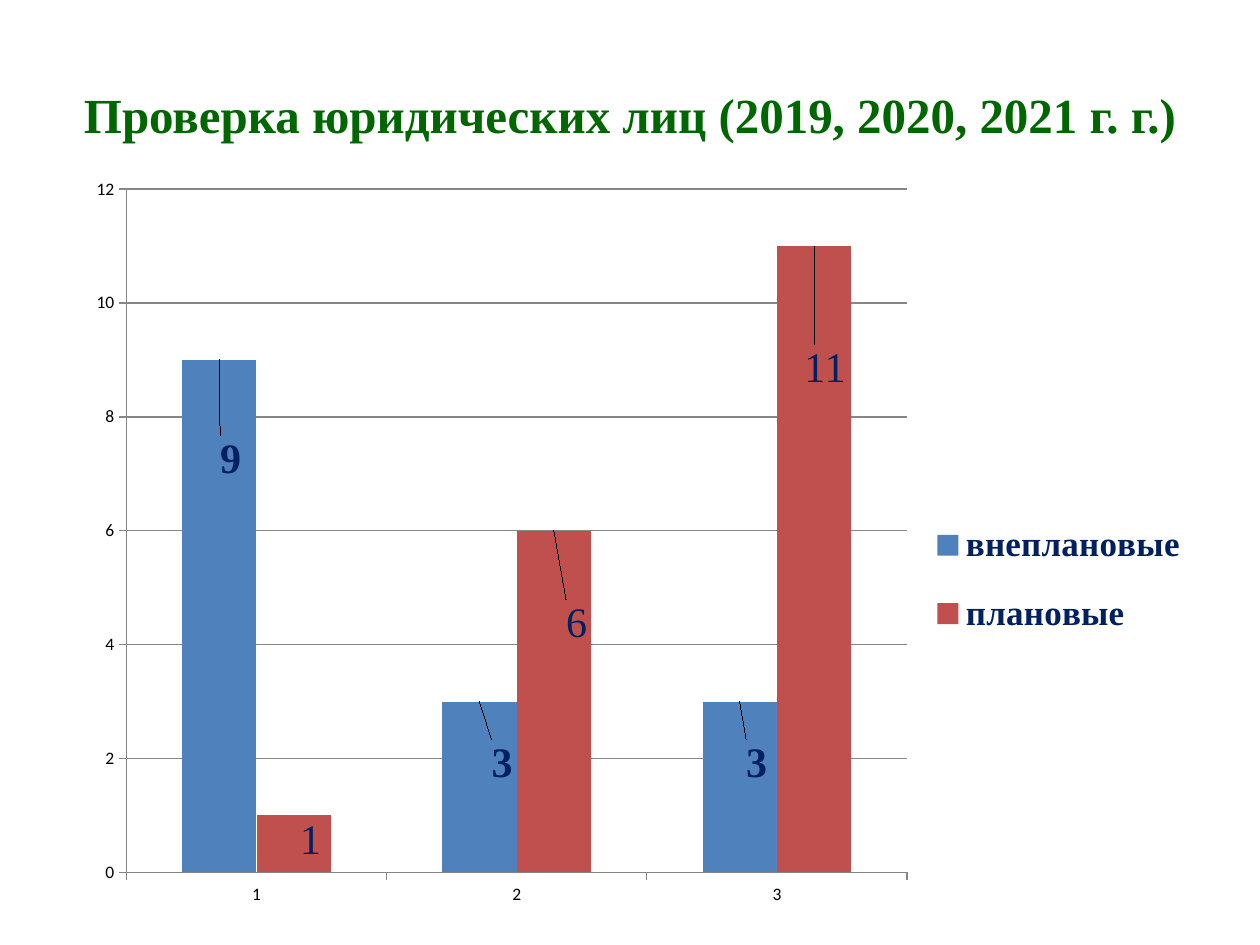
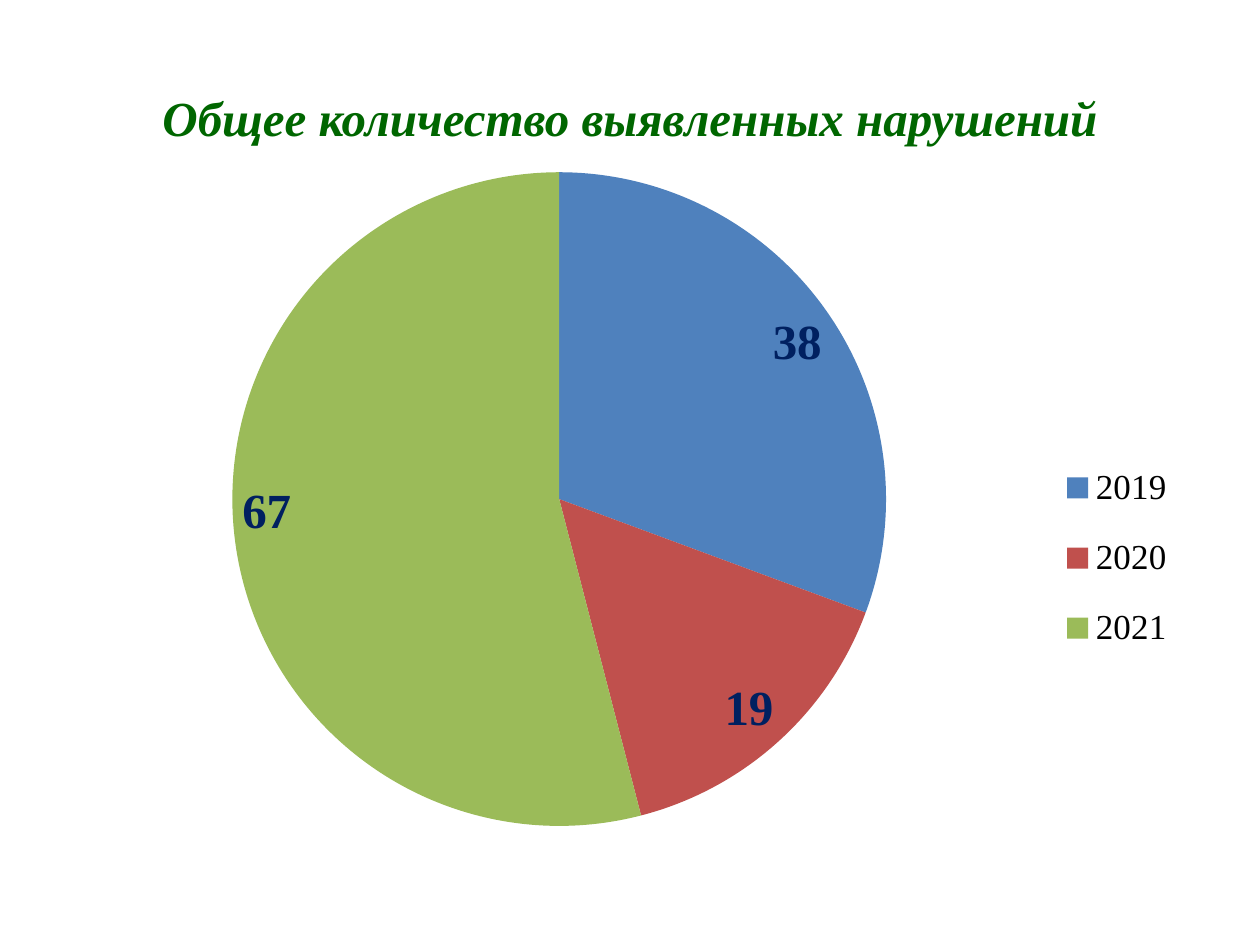
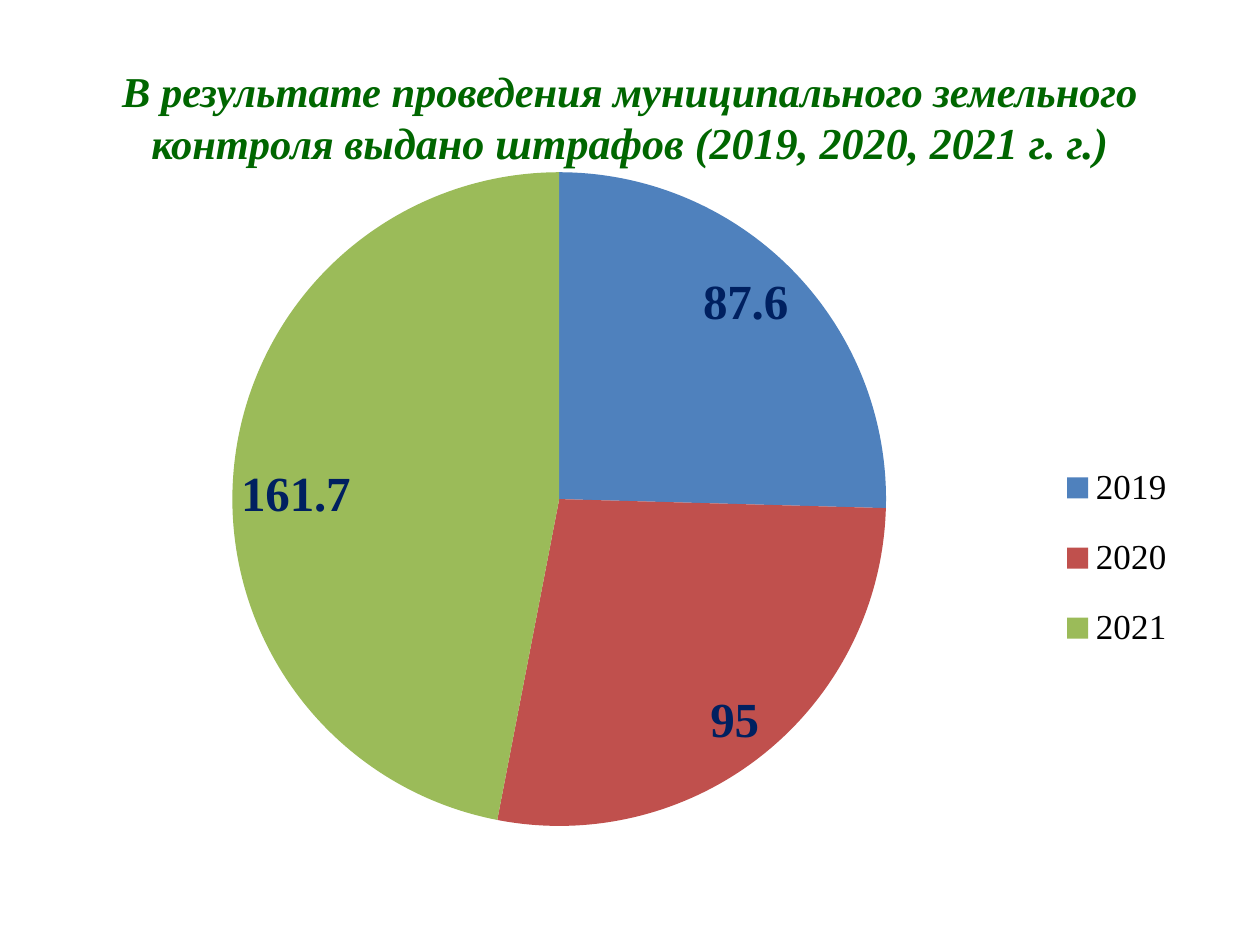
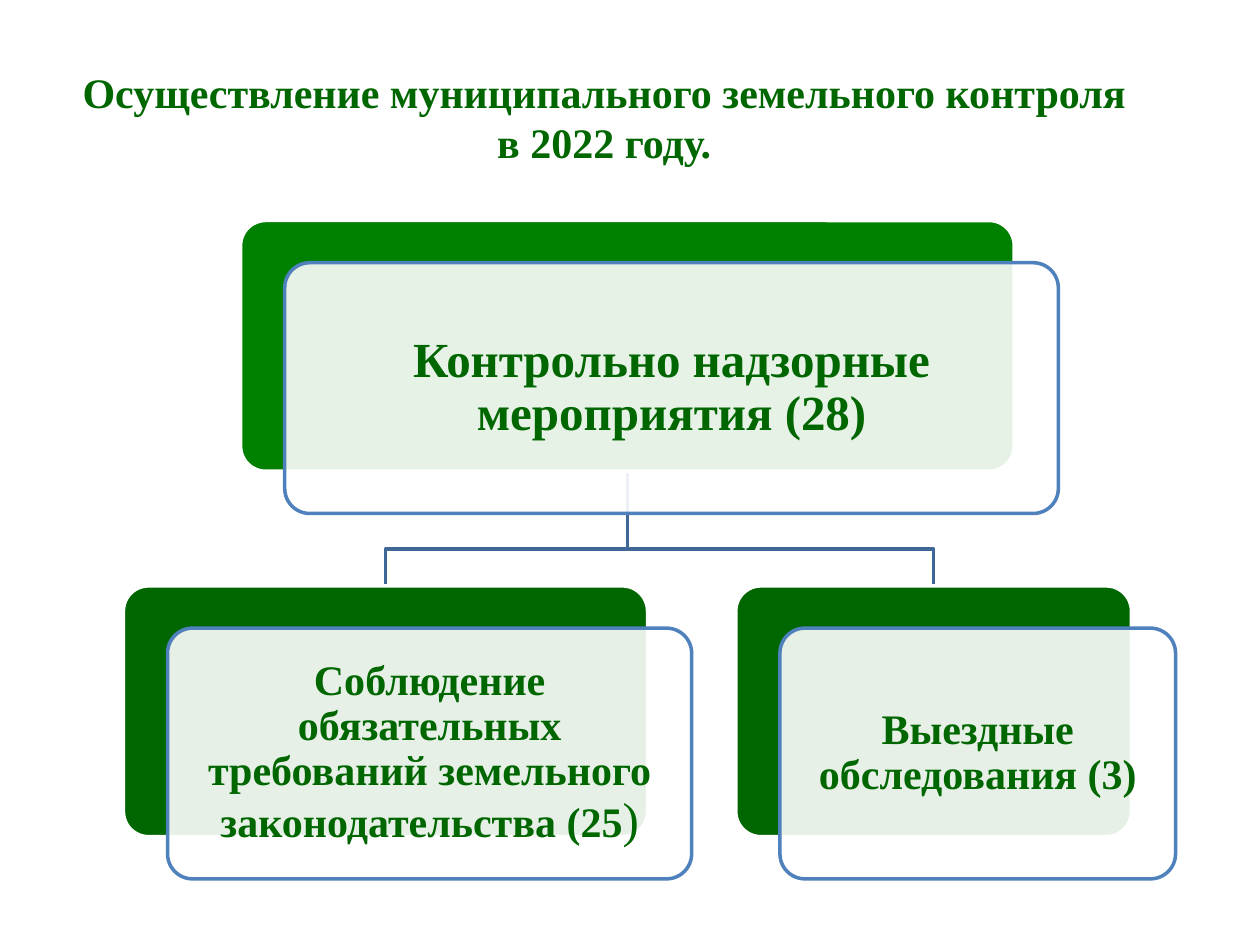
from dataclasses import dataclass

from lxml import etree
from pptx import Presentation
from pptx.chart.data import CategoryChartData
from pptx.dml.color import RGBColor
from pptx.enum.chart import XL_CHART_TYPE, XL_LABEL_POSITION, XL_LEGEND_POSITION, XL_TICK_MARK
from pptx.enum.shapes import MSO_SHAPE
from pptx.enum.text import MSO_ANCHOR, PP_ALIGN
from pptx.oxml.ns import qn
from pptx.util import Inches, Pt

COLUMN = PIE = None
COLUMN, PIE = XL_CHART_TYPE.COLUMN_CLUSTERED, XL_CHART_TYPE.PIE
OUTSIDE_END, INSIDE_END = XL_LABEL_POSITION.OUTSIDE_END, XL_LABEL_POSITION.INSIDE_END
RIGHT = XL_LEGEND_POSITION.RIGHT
TICK_OUT, TICK_NONE = XL_TICK_MARK.OUTSIDE, XL_TICK_MARK.NONE
ROUNDED = MSO_SHAPE.ROUNDED_RECTANGLE
TOP, MIDDLE = MSO_ANCHOR.TOP, MSO_ANCHOR.MIDDLE
CENTER = PP_ALIGN.CENTER

COLUMNS, ROWS = 100, 75
SLIDE_WIDTH, SLIDE_HEIGHT = Inches(10), Inches(7.5)


@dataclass(frozen=True)
class Theme:
    serif: str = "Times New Roman"
    sans: str = "Calibri"
    heading: str = "006600"
    accent: str = "008000"
    navy: str = "002060"
    black: str = "000000"
    white: str = "FFFFFF"
    axis: str = "868686"
    outline: str = "4F81BD"
    branch: str = "3F6797"
    series: tuple = ("4F81BD", "C0504D", "9BBB59")
    large: float = 28
    medium: float = 24
    legend: float = 20
    pie_base: float = 18
    axis_text: float = 10
    stroke: float = 2


THEME = Theme()


@dataclass(frozen=True)
class Box:
    x: float
    y: float
    w: float
    h: float

    def emu(self):
        return (to_x(self.x), to_y(self.y), to_x(self.w), to_y(self.h))

    def shifted(self, dx, dy):
        return Box(self.x + dx, self.y + dy, self.w, self.h)

    def inset(self, d):
        return Box(self.x + d, self.y + d, self.w - 2 * d, self.h - 2 * d)

    @property
    def center(self):
        return self.x + self.w / 2

    @property
    def bottom(self):
        return self.y + self.h


def to_x(columns):
    return int(SLIDE_WIDTH * columns / COLUMNS)


def to_y(rows):
    return int(SLIDE_HEIGHT * rows / ROWS)


TITLE_BOX = Box(5, 3, 90, 12.5)
PIE_BOX = Box(4.3, 12.3, 90.7, 54.7)
YEARS = ("2019", "2020", "2021")


def style_font(font, size, color=THEME.heading, bold=True, italic=False, name=THEME.serif):
    values = {"size": Pt(size), "bold": bold, "italic": italic, "name": name}
    for key, value in values.items():
        setattr(font, key, value)
    font.color.rgb = RGBColor.from_string(color)


def add_text(slide, box, runs, margin=0.1, spacing=1.0, anchor=MIDDLE, top=None):
    frame = slide.shapes.add_textbox(*box.emu()).text_frame
    side = Inches(margin)
    values = {
        "word_wrap": True,
        "vertical_anchor": anchor,
        "margin_left": side,
        "margin_right": side,
        "margin_top": side if top is None else Inches(top),
        "margin_bottom": side,
    }
    for key, value in values.items():
        setattr(frame, key, value)
    paragraph = frame.paragraphs[0]
    paragraph.alignment = CENTER
    paragraph.line_spacing = spacing
    for text, font in runs:
        run = paragraph.add_run()
        run.text = text
        style_font(run.font, **font)


def place(parent, index, inner=False, **shares):
    for old in parent.findall(qn("c:layout")):
        parent.remove(old)
    layout = etree.Element(qn("c:layout"))
    manual = etree.SubElement(layout, qn("c:manualLayout"))
    settings = {"layoutTarget": "inner"} if inner else {}
    if "w" in shares:
        settings.update(xMode="edge", yMode="edge")
    settings.update(shares)
    for tag, value in settings.items():
        etree.SubElement(manual, qn(f"c:{tag}")).set("val", str(value))
    parent.insert(index, layout)


def add_chart(slide, box, kind, categories, series, base_size, plot_area, legend_area, legend_font):
    data = CategoryChartData()
    data.categories = categories
    for name, values in series:
        data.add_series(name, values)
    chart = slide.shapes.add_chart(kind, *box.emu(), data).chart
    style_font(chart.font, base_size, THEME.black, bold=False, name=THEME.sans)
    chart.has_title = False
    chart.has_legend = True
    chart.legend.position = RIGHT
    chart.legend.include_in_layout = False
    style_font(chart.legend.font, THEME.legend, **legend_font)
    place(chart.element.find(f".//{qn('c:plotArea')}"), 0, inner=True, **plot_area)
    place(chart.element.find(f".//{qn('c:legend')}"), 1, **legend_area)
    return chart


def paint(target, color):
    target.format.fill.solid()
    target.format.fill.fore_color.rgb = RGBColor.from_string(color)


def style_axes(chart):
    for axis, has_grid in ((chart.category_axis, False), (chart.value_axis, True)):
        values = {
            "major_tick_mark": TICK_OUT,
            "minor_tick_mark": TICK_NONE,
            "has_major_gridlines": has_grid,
        }
        for key, value in values.items():
            setattr(axis, key, value)
        lines = [axis.format.line]
        if has_grid:
            lines.append(axis.major_gridlines.format.line)
        for line in lines:
            line.color.rgb = RGBColor.from_string(THEME.axis)
            line.width = Pt(0.75)
    chart.value_axis.minimum_scale = 0
    chart.value_axis.maximum_scale = 12
    chart.value_axis.major_unit = 2


def add_inspections(slide, box):
    inspections = (("внеплановые", (9, 3, 3)), ("плановые", (1, 6, 11)))
    label_shifts = (
        ((0.01, 0.17), (0.02, 0.12), (0.015, 0.12)),
        ((0.015, 0.07), (0.02, 0.16), (0.01, 0.2)),
    )
    chart = add_chart(
        slide, box, COLUMN, ("1", "2", "3"), inspections, THEME.axis_text,
        {"x": 0.046, "y": 0.032, "w": 0.69, "h": 0.907},
        {"x": 0.75, "y": 0.44, "w": 0.24, "h": 0.22},
        {"color": THEME.navy, "bold": True},
    )
    style_axes(chart)
    plot = chart.plots[0]
    plot.gap_width = 150
    plot.overlap = 0
    plot.vary_by_categories = False
    for series, color, shifts, bold in zip(plot.series, THEME.series, label_shifts, (True, False)):
        paint(series, color)
        series.data_labels.show_value = True
        style_font(series.data_labels.font, THEME.medium, THEME.navy, bold)
        for index, (dx, dy) in enumerate(shifts):
            label = series.points[index].data_label
            style_font(label.font, THEME.medium, THEME.navy, bold)
            label.position = OUTSIDE_END
        for mark, (dx, dy) in zip(series.data_labels._element.findall(qn("c:dLbl")), shifts):
            place(mark, 1, x=dx, y=dy)


def add_yearly_pie(slide, box, values):
    chart = add_chart(
        slide, box, PIE, YEARS, (("Series 1", values),), THEME.pie_base,
        {"x": 0.156, "y": 0.025, "w": 0.572, "h": 0.949},
        {"x": 0.87, "y": 0.41, "w": 0.12, "h": 0.35},
        {"color": THEME.black, "bold": False},
    )
    plot = chart.plots[0]
    plot.vary_by_categories = True
    series = plot.series[0]
    for index, color in enumerate(THEME.series):
        paint(series.points[index], color)
    labels = series.data_labels
    labels.show_value = True
    labels.position = INSIDE_END
    style_font(labels.font, THEME.large, THEME.navy)


def add_card(slide, box, color, runs, margin):
    front = box.shifted(3.5, 3.35)
    layers = ((box, color, THEME.white, None), (front, THEME.white, THEME.outline, 90))
    for area, fill, line, opacity in layers:
        card = slide.shapes.add_shape(ROUNDED, *area.emu())
        card.shadow.inherit = False
        card.adjustments[0] = 0.1
        card.fill.solid()
        card.fill.fore_color.rgb = RGBColor.from_string(fill)
        card.line.color.rgb = RGBColor.from_string(line)
        card.line.width = Pt(THEME.stroke)
        if opacity:
            tint = card.fill._xPr.find(f".//{qn('a:srgbClr')}")
            etree.SubElement(tint, qn("a:alpha")).set("val", str(opacity * 1000))
    add_text(slide, front.inset(0.58), runs, margin, spacing=0.9)


def add_branch(slide, parent, child):
    bend = parent.bottom + 0.68 * (child.y - parent.bottom)
    route = ((parent.center, bend), (child.center, bend), (child.center, child.y))
    builder = slide.shapes.build_freeform(to_x(parent.center), to_y(parent.bottom))
    builder.add_line_segments([(to_x(x), to_y(y)) for x, y in route], close=False)
    branch = builder.convert_to_shape()
    branch.shadow.inherit = False
    branch.fill.background()
    branch.line.color.rgb = RGBColor.from_string(THEME.branch)
    branch.line.width = Pt(THEME.stroke)


def add_control_tree(slide, box):
    measures = Box(box.x + 9.3, box.y, 61.4, 19.9)
    compliance = Box(box.x, box.y + 29, 41.6, 19.9)
    visits = Box(box.x + 48.6, box.y + 29, 31.4, 19.9)
    for child in (visits, compliance):
        add_branch(slide, measures, child)
    large, medium = {"size": THEME.large}, {"size": THEME.medium}
    cards = (
        (measures, THEME.accent, [("Контрольно надзорные мероприятия (28)", large)], 0.12),
        (compliance, THEME.heading, [
            ("Соблюдение обязательных требований земельного законодательства (25", medium),
            (")", {"size": THEME.large, "bold": False}),
        ], 0.1),
        (visits, THEME.heading, [("Выездные обследования (3)", medium)], 0.1),
    )
    for card in cards:
        add_card(slide, *card)


def main():
    deck = Presentation()
    deck.slide_width, deck.slide_height = SLIDE_WIDTH, SLIDE_HEIGHT
    inspections, violations, fines, control = (
        deck.slides.add_slide(deck.slide_layouts[6]) for _ in range(4)
    )

    add_text(
        inspections, Box(5, 3, 90, 6.9),
        [("Проверка юридических лиц (2019, 2020, 2021 г. г.)", {"size": THEME.large})],
        anchor=TOP, top=0.37,
    )
    add_inspections(inspections, Box(5.9, 13.1, 89.8, 59.8))

    add_text(violations, TITLE_BOX, [
        ("Общее количество выявленных нарушений", {"size": THEME.large, "italic": True}),
    ])
    add_yearly_pie(violations, PIE_BOX, (38, 19, 67))

    add_text(fines, TITLE_BOX, [
        ("В результате проведения муниципального земельного контроля в", {"size": 24.3, "italic": True}),
        ("ыдано штрафов (2019, 2020, 2021 г. г.)", {"size": 25.2, "italic": True}),
    ])
    add_yearly_pie(fines, PIE_BOX, (87.6, 95, 161.7))

    add_text(control, Box(5, 3, 85.9, 12.5), [
        ("Осуществление муниципального земельного контроля в 2022 году.", {"size": THEME.medium}),
    ])
    add_control_tree(control, Box(9.8, 17.5, 80, 48.9))

    deck.save("out.pptx")


if __name__ == "__main__":
    main()
